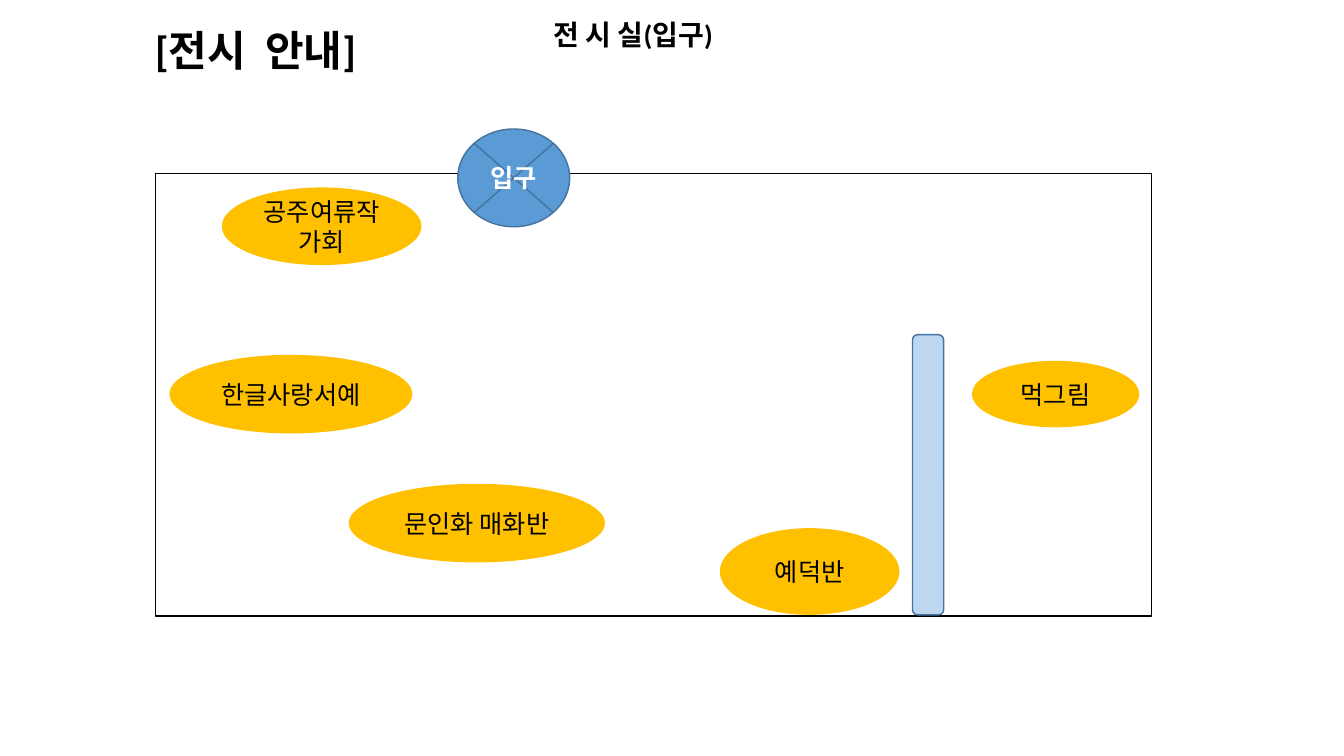
from pptx import Presentation
from pptx.dml.color import RGBColor
from pptx.enum.shapes import MSO_SHAPE as Kind
from pptx.enum.text import MSO_ANCHOR as Anchor, MSO_AUTO_SIZE as Fit, PP_ALIGN as Align
from pptx.util import Inches, Pt

BLACK = RGBColor(0x00, 0x00, 0x00)
WHITE = RGBColor(0xFF, 0xFF, 0xFF)
BLUE = RGBColor(0x5B, 0x9B, 0xD5)
EDGE = RGBColor(0x43, 0x73, 0x9E)
PALE = RGBColor(0xBD, 0xD7, 0xEE)
GOLD = RGBColor(0xFF, 0xC0, 0x00)
FONT = "Calibri"

# Content: boxes are left, top, width, height in inches
ROOM = (1.54, 1.72, 9.88, 4.39)
DOOR = ("입구", (4.54, 1.28, 1.11, 0.97))
WALL = (9.05, 3.32, 0.31, 2.78)
GROUPS = [
    ("공주여류작가회", (2.2, 1.86, 1.98, 0.77)),
    ("한글사랑서예", (1.68, 3.52, 2.41, 0.78)),
    ("예덕반", (7.14, 5.24, 1.78, 0.86)),
    ("먹그림", (9.64, 3.58, 1.66, 0.66)),
    ("문인화 매화반", (3.46, 4.8, 2.54, 0.78)),
]
HALL = ("전 시 실(입구)", (2.75, 0.12, 7.06, 0.44), 20, Align.CENTER, True)
TITLE = ("[전시  안내]", (1.44, 0.19, 2.44, 0.61), 30, Align.LEFT, False)


def write(frame, text, size, color, bold, align):
    para = frame.paragraphs[0]
    para.text = text
    para.alignment = align
    font = para.font
    font.name, font.size, font.bold = FONT, Pt(size), bold
    font.color.rgb = color


def add_form(slide, kind, box, fill, line=None, text="", color=BLACK, bold=False):
    form = slide.shapes.add_shape(kind, *map(Inches, box))
    form.shadow.inherit = False
    form.fill.solid()
    form.fill.fore_color.rgb = fill
    if line is None:
        form.line.fill.background()
    else:
        form.line.color.rgb = line
        form.line.width = Pt(1)
    if text:
        form.text_frame.word_wrap = True
        form.text_frame.vertical_anchor = Anchor.MIDDLE
        write(form.text_frame, text, 18, color, bold, Align.CENTER)


def add_label(slide, text, box, size, align, wrap):
    frame = slide.shapes.add_textbox(*map(Inches, box)).text_frame
    frame.word_wrap = wrap
    frame.auto_size = Fit.SHAPE_TO_FIT_TEXT
    write(frame, text, size, BLACK, True, align)


def main():
    deck = Presentation()
    deck.slide_width, deck.slide_height = Inches(13.33), Inches(7.5)
    slide = deck.slides.add_slide(deck.slide_layouts[6])

    # Room with its entrance and inner wall
    add_form(slide, Kind.RECTANGLE, ROOM, WHITE, BLACK)
    add_label(slide, *HALL)
    name, box = DOOR
    add_form(slide, Kind.FLOWCHART_SUMMING_JUNCTION, box, BLUE, EDGE, name, WHITE, True)
    add_form(slide, Kind.ROUNDED_RECTANGLE, WALL, PALE, EDGE)

    # Exhibiting groups
    for name, box in GROUPS:
        add_form(slide, Kind.OVAL, box, GOLD, text=name)

    # Title
    add_label(slide, *TITLE)
    deck.save("out.pptx")


if __name__ == "__main__":
    main()
